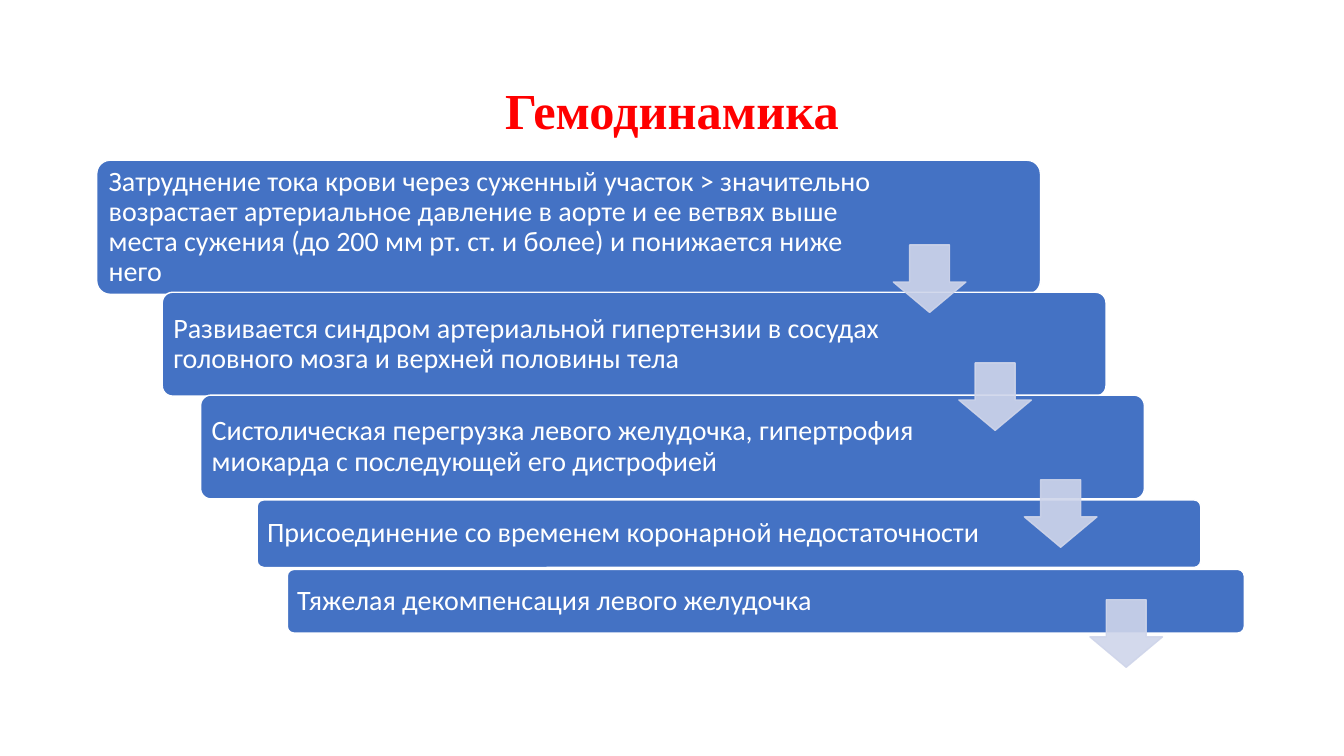
"""Build the haemodynamics slide: a staircase of steps linked by down arrows."""
from dataclasses import dataclass

from lxml import etree
from pptx import Presentation
from pptx.dml.color import RGBColor
from pptx.enum.shapes import MSO_SHAPE
from pptx.enum.text import MSO_ANCHOR, MSO_AUTO_SIZE, PP_ALIGN
from pptx.oxml.ns import qn
from pptx.util import Inches, Pt

ROUND_RECT = MSO_SHAPE.ROUNDED_RECTANGLE
DOWN_ARROW = MSO_SHAPE.DOWN_ARROW
MIDDLE = MSO_ANCHOR.MIDDLE
NO_FIT = MSO_AUTO_SIZE.NONE
LEFT, CENTER = PP_ALIGN.LEFT, PP_ALIGN.CENTER


@dataclass(frozen=True)
class Theme:
    """Colours, fonts and sizes of the slide."""
    title: str = "FF0000"
    step: str = "4472C4"
    light: str = "FFFFFF"
    arrow: str = "CFD5EA"
    arrow_alpha: int = 90
    title_font: str = "Times New Roman"
    body_font: str = "Calibri"
    title_size: int = 36
    body_size: int = 20
    line_width: int = 1
    inset: float = 0.08


@dataclass(frozen=True)
class Step:
    """One stair: its box, the width kept for text, and its wording."""
    left: float
    top: float
    width: float
    height: float
    text_width: float
    text: str


THEME = Theme()
CORNER = 0.1
CORNER_INSET = 0.29 * CORNER
ARROW_LEFT, ARROW_STEP = 8.86, 0.65
ARROW_WIDTH, ARROW_HEIGHT = 0.72, 0.67
ARROW_TOPS = (2.43, 3.6, 4.76, 5.95)
STEPS = (
    Step(0.96, 1.59, 9.36, 1.33, 8.02,
         "Затруднение тока крови через суженный участок > значительно "
         "возрастает артериальное давление в аорте и ее ветвях выше места "
         "сужения (до 200 мм рт. ст. и более) и понижается ниже него"),
    Step(1.61, 2.9, 9.36, 1.03, 7.88,
         "Развивается синдром артериальной гипертензии в сосудах головного "
         "мозга и верхней половины тела"),
    Step(1.99, 3.92, 9.36, 1.03, 7.88,
         "Систолическая перегрузка левого желудочка, гипертрофия миокарда "
         "с последующей его дистрофией"),
    Step(2.55, 4.96, 9.36, 0.67, 7.9,
         "Присоединение со временем коронарной недостаточности"),
    Step(2.85, 5.65, 9.49, 0.63, 8.01,
         "Тяжелая декомпенсация левого желудочка"),
)


def write(tf, text: str, *, font: str, size: int, color: str,
          bold: bool = False, align=LEFT) -> None:
    """Put one formatted paragraph into a text frame."""
    tf.word_wrap = True
    tf.auto_size = NO_FIT
    tf.vertical_anchor = MIDDLE
    p = tf.paragraphs[0]
    p.alignment = align
    p.line_spacing = 0.9
    r = p.add_run()
    r.text = text
    r.font.name = font
    r.font.size = Pt(size)
    r.font.bold = bold
    r.font.color.rgb = RGBColor.from_string(color)


def add_box(s, kind, left: float, top: float, width: float, height: float, *,
            fill: str, line: str, adjustments: tuple[float, ...]):
    """Add a flat preset shape with its fill, line and adjustments."""
    sp = s.shapes.add_shape(kind, Inches(left), Inches(top),
                            Inches(width), Inches(height))
    sp.shadow.inherit = False
    sp.fill.solid()
    sp.fill.fore_color.rgb = RGBColor.from_string(fill)
    sp.line.color.rgb = RGBColor.from_string(line)
    sp.line.width = Pt(THEME.line_width)
    for i, value in enumerate(adjustments):
        sp.adjustments[i] = value
    return sp


def set_alpha(sp, percent: int) -> None:
    """Make the fill and line of a shape partly transparent."""
    for color in sp._element.spPr.iter(qn("a:srgbClr")):
        etree.SubElement(color, qn("a:alpha")).set("val", str(percent * 1000))


def add_title(s, text: str) -> None:
    """Place and format the title placeholder."""
    sp = s.shapes.title
    sp.left, sp.top = Inches(3.74), Inches(0.72)
    sp.width, sp.height = Inches(5.85), Inches(0.81)
    write(sp.text_frame, text, font=THEME.title_font, size=THEME.title_size,
          color=THEME.title, bold=True, align=CENTER)


def add_step(s, step: Step) -> None:
    """Draw a stair, leaving room for the arrow right of its text."""
    sp = add_box(s, ROUND_RECT, step.left, step.top, step.width, step.height,
                 fill=THEME.step, line=THEME.light, adjustments=(CORNER,))
    tf = sp.text_frame
    inset = Inches(THEME.inset)
    tf.margin_left = tf.margin_top = tf.margin_bottom = inset
    spare = step.width - 2 * CORNER_INSET * step.height - step.text_width
    tf.margin_right = Inches(spare + THEME.inset)
    write(tf, step.text, font=THEME.body_font, size=THEME.body_size,
          color=THEME.light)


def add_arrow(s, left: float, top: float) -> None:
    """Draw one translucent down arrow."""
    sp = add_box(s, DOWN_ARROW, left, top, ARROW_WIDTH, ARROW_HEIGHT,
                 fill=THEME.arrow, line=THEME.arrow, adjustments=(0.55, 0.45))
    set_alpha(sp, THEME.arrow_alpha)


def main() -> None:
    """Build and save the presentation."""
    prs = Presentation()
    prs.slide_width, prs.slide_height = Inches(13.33), Inches(7.5)
    s = prs.slides.add_slide(prs.slide_layouts[5])
    add_title(s, "Гемодинамика")
    for step in STEPS:
        add_step(s, step)
    for i, top in enumerate(ARROW_TOPS):
        add_arrow(s, ARROW_LEFT + i * ARROW_STEP, top)
    prs.save("out.pptx")


if __name__ == "__main__":
    main()
